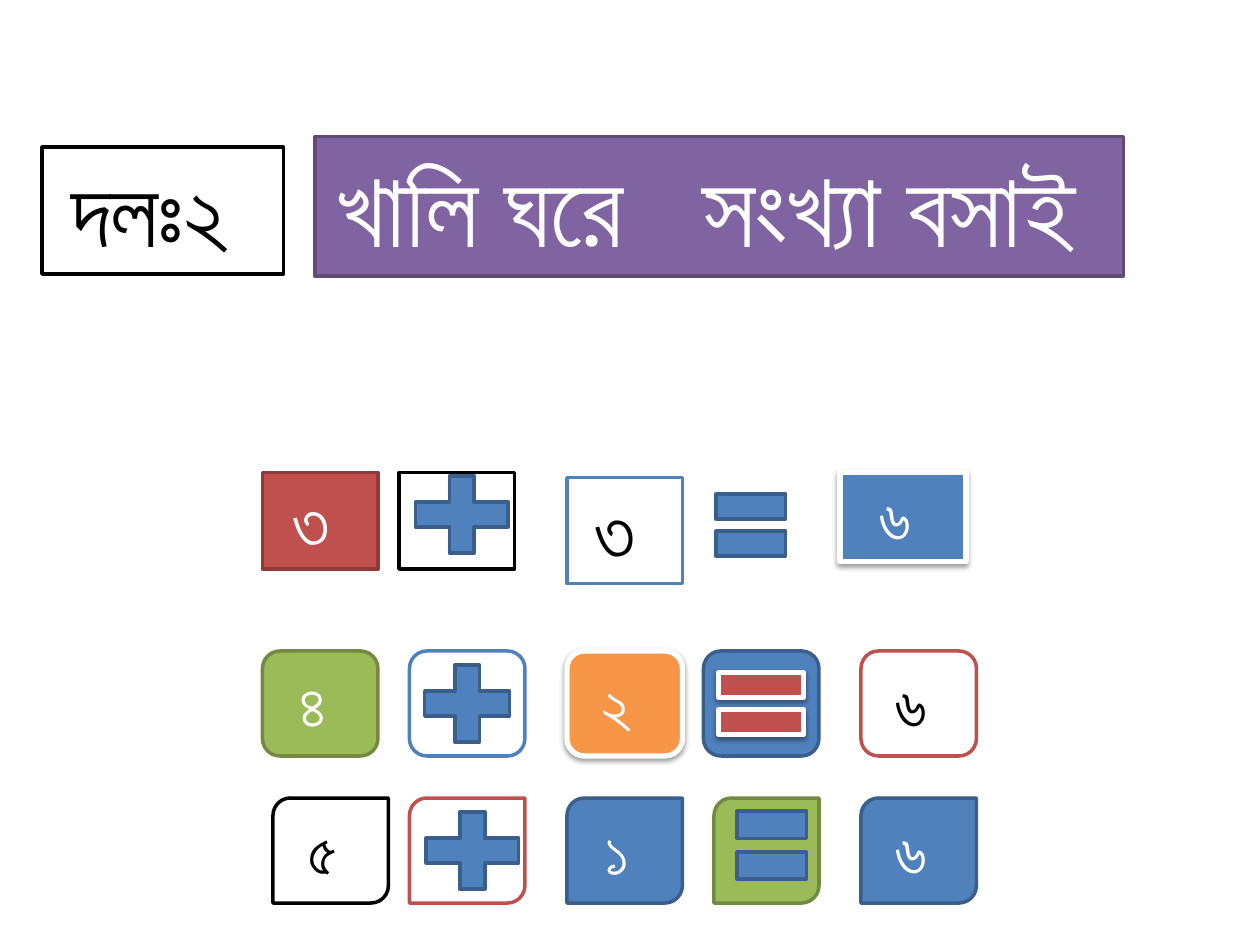
from dataclasses import dataclass

from lxml.etree import SubElement
from pptx import Presentation
from pptx.dml.color import RGBColor
from pptx.enum.shapes import MSO_SHAPE as Preset
from pptx.enum.text import MSO_ANCHOR as Anchor, MSO_AUTO_SIZE as AutoSize, PP_ALIGN as Align
from pptx.oxml.ns import qn
from pptx.util import Inches, Pt

COLUMNS, ROWS = 120, 90
FONT = "Roboto"
COLORS = {
    "white": "FFFFFF", "black": "000000",
    "blue": "4F81BD", "dark blue": "3A5F8C",
    "red": "C0504D", "dark red": "8E3B39",
    "green": "9BBB59", "dark green": "738A42",
    "purple": "8064A2", "dark purple": "5F4A78",
    "orange": "F79646",
}


@dataclass(frozen=True)
class Style:
    fill: str
    line: str
    text: str = "white"
    raised: bool = False


@dataclass(frozen=True)
class Tile:
    column: float
    row: float
    width: float
    height: float
    style: Style
    preset: Preset = Preset.RECTANGLE
    words: tuple[str, ...] = ()
    size: int = 36


def solid(color: str) -> Style:
    return Style(color, f"dark {color}")


def outlined(color: str) -> Style:
    return Style("white", color, "black")


def raised(color: str) -> Style:
    return Style(color, "white", raised=True)


def equation_row(row: float, preset: Preset, cells: list[tuple]) -> list[Tile]:
    """Lay out (column, width, style, digit) cells of one height."""
    return [Tile(column, row, width, 10, style, preset, (digit,) if digit else ())
            for column, width, style, digit in cells]


BLUE = solid("blue")
ROUND, DIAGONAL = Preset.ROUNDED_RECTANGLE, Preset.ROUND_2_DIAG_RECTANGLE
PLUS, EQUAL = Preset.MATH_PLUS, Preset.MATH_EQUAL

HEADINGS = [
    Tile(4, 14, 23, 12.1, outlined("black"), words=("দলঃ২ ",), size=54),
    Tile(30, 13, 77, 13.3, solid("purple"), words=("খালি ঘরে", "সংখ্যা বসাই "), size=60),
]
FIRST_SUM = [
    Tile(25, 45, 11, 9.2, solid("red"), words=("৩ ",), size=40),
    Tile(38, 45, 11, 9.2, outlined("black")),
    Tile(54, 45.5, 11, 10.1, outlined("blue"), words=("৩ ",), size=44),
    Tile(80, 45, 12, 8.5, raised("blue"), words=("৬ ",)),
    Tile(38, 44, 12, 10, BLUE, PLUS),
    Tile(67, 45, 9, 10, BLUE, EQUAL),
]
SECOND_SUM = equation_row(62, ROUND, [
    (25, 11, solid("green"), "৪ "),
    (39, 11, outlined("blue"), ""),
    (54, 11, raised("orange"), "২ "),
    (67, 11, BLUE, ""),
    (82, 11, outlined("red"), "৬ "),
]) + [
    Tile(39, 62, 11, 10, BLUE, PLUS),
    Tile(67, 62, 11, 10, raised("red"), EQUAL),
]
THIRD_SUM = equation_row(76, DIAGONAL, [
    (26, 11, outlined("black"), "৫ "),
    (39, 11, outlined("red"), ""),
    (54, 11, BLUE, "১ "),
    (68, 10, solid("green"), ""),
    (82, 11, BLUE, "৬ "),
]) + [
    Tile(39, 76, 12, 10, BLUE, PLUS),
    Tile(69, 75, 9, 11, BLUE, EQUAL),
]


def rgb(name: str) -> RGBColor:
    return RGBColor.from_string(COLORS[name])


def add_shadow(shape) -> None:
    effects = shape._element.spPr.find(qn("a:effectLst"))
    shadow = SubElement(effects, qn("a:outerShdw"), blurRad=str(Pt(3.1)),
                        dist=str(Pt(1.6)), dir="5400000", rotWithShape="0")
    color = SubElement(shadow, qn("a:srgbClr"), val=COLORS["black"])
    SubElement(color, qn("a:alpha"), val="38000")


def write_words(shape, tile: Tile) -> None:
    """Write the phrases centred, with one widened space between them."""
    frame = shape.text_frame
    frame.word_wrap = True
    if tile.preset == Preset.RECTANGLE:
        frame.vertical_anchor = Anchor.TOP
        frame.auto_size = AutoSize.SHAPE_TO_FIT_TEXT
    else:
        frame.vertical_anchor = Anchor.MIDDLE
    para = frame.paragraphs[0]
    para.alignment = Align.CENTER
    for index, phrase in enumerate(tile.words):
        if index:
            gap = para.add_run()
            gap.text = " "
            gap.font._element.set("spc", str(tile.size * 50))
        para.add_run().text = phrase
    for span in para.runs:
        span.font.name = FONT
        span.font.size = Pt(tile.size)
        span.font.color.rgb = rgb(tile.style.text)


def draw_tile(deck, page, tile: Tile) -> None:
    across, down = deck.slide_width / COLUMNS, deck.slide_height / ROWS
    shape = page.shapes.add_shape(
        tile.preset, round(tile.column * across), round(tile.row * down),
        round(tile.width * across), round(tile.height * down))
    shape.shadow.inherit = False
    shape.fill.solid()
    shape.fill.fore_color.rgb = rgb(tile.style.fill)
    shape.line.color.rgb = rgb(tile.style.line)
    shape.line.width = Pt(3 if tile.style.raised else 2)
    if tile.style.raised:
        add_shadow(shape)
    if tile.words:
        write_words(shape, tile)


def main() -> None:
    deck = Presentation()
    deck.slide_width, deck.slide_height = Inches(10), Inches(7.5)
    page = deck.slides.add_slide(deck.slide_layouts[6])
    for tile in HEADINGS + FIRST_SUM + SECOND_SUM + THIRD_SUM:
        draw_tile(deck, page, tile)
    deck.save("out.pptx")


if __name__ == "__main__":
    main()
